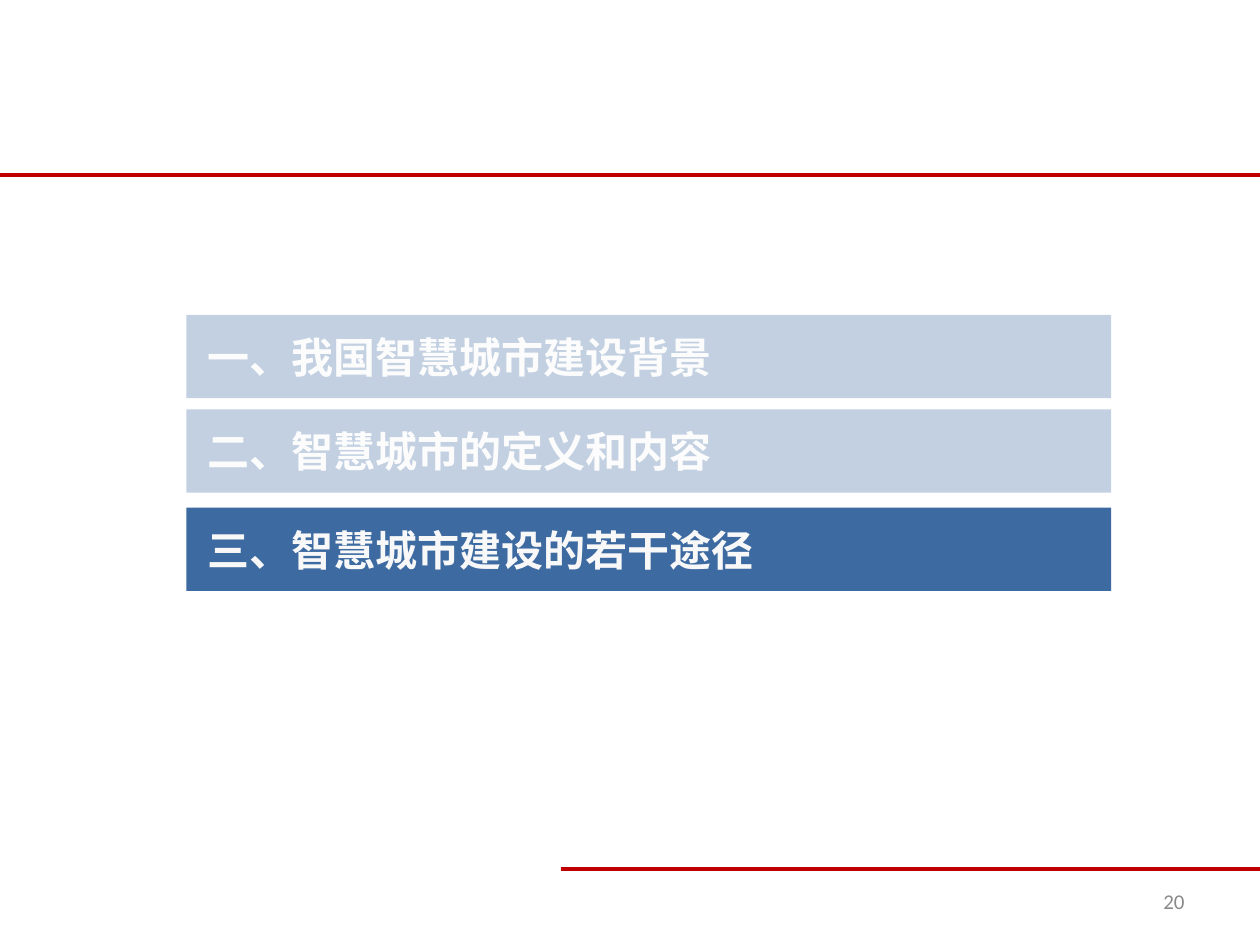
from dataclasses import dataclass

from lxml import etree
from pptx import Presentation
from pptx.dml.color import RGBColor
from pptx.enum.shapes import MSO_CONNECTOR, MSO_SHAPE
from pptx.enum.text import MSO_ANCHOR, PP_ALIGN
from pptx.oxml.ns import qn
from pptx.util import Inches, Pt

RECT = MSO_SHAPE.RECTANGLE
STRAIGHT = MSO_CONNECTOR.STRAIGHT
MIDDLE = MSO_ANCHOR.MIDDLE
LEFT, RIGHT = PP_ALIGN.LEFT, PP_ALIGN.RIGHT

RED, BLUE, WHITE = "C00000", "3D6AA1", "FFFFFF"
PALE, GREY = "F8F8F8", "898989"
CJK, LATIN = "Noto Sans CJK SC", "Calibri"
BAR_LEFT, BAR_WIDTH, BAR_HEIGHT = 1.48, 7.34, 0.66


@dataclass
class Section:
    top: float
    title: str


@dataclass
class Rule:
    left: float
    y: float


SECTIONS = [
    Section(2.5, "一、我国智慧城市建设背景"),
    Section(3.25, "二、智慧城市的定义和内容"),
    Section(4.03, "三、智慧城市建设的若干途径"),
]
RULES = [Rule(0, 1.39), Rule(4.45, 6.9)]


def rgb(value: str) -> RGBColor:
    return RGBColor.from_string(value)


def write(sp, text: str, *, size: float, color: str, font: str,
          bold: bool = False, align=LEFT, inset: float = 0.1,
          wrap: bool = True) -> None:
    tf = sp.text_frame
    tf.word_wrap = wrap
    tf.vertical_anchor = MIDDLE
    tf.margin_left = Inches(inset)
    p = tf.paragraphs[0]
    p.alignment = align
    r = p.add_run()
    r.text = text
    r.font.size = Pt(size)
    r.font.bold = bold
    r.font.name = font
    r.font.color.rgb = rgb(color)
    etree.SubElement(r.font._element, qn("a:ea"), typeface=font)


def add_rect(slide, left: float, top: float, width: float, height: float,
             fill: str, opacity: int = 100):
    """Add a borderless rectangle; opacity is a percentage."""
    sp = slide.shapes.add_shape(RECT, Inches(left), Inches(top),
                                Inches(width), Inches(height))
    sp.shadow.inherit = False
    sp.fill.solid()
    sp.fill.fore_color.rgb = rgb(fill)
    sp.line.fill.background()
    if opacity < 100:
        color = sp._element.spPr.find(qn("a:solidFill"))[0]
        etree.SubElement(color, qn("a:alpha"), val=str(opacity * 1000))
    return sp


def add_rule(slide, rule: Rule) -> None:
    """Add a red line that runs to the right edge of the slide."""
    line = slide.shapes.add_connector(STRAIGHT, Inches(rule.left), Inches(rule.y),
                                      Inches(10), Inches(rule.y))
    line.line.color.rgb = rgb(RED)
    line.line.width = Pt(2.25)
    etree.SubElement(line._element.spPr, qn("a:effectLst"))


def add_section(slide, section: Section) -> None:
    bar = add_rect(slide, BAR_LEFT, section.top, BAR_WIDTH, BAR_HEIGHT, BLUE)
    write(bar, section.title, size=24, color=PALE, font=CJK, bold=True,
          inset=0.17, wrap=False)


def main() -> None:
    prs = Presentation()
    prs.slide_width, prs.slide_height = Inches(10), Inches(7.5)
    slide = prs.slides.add_slide(prs.slide_layouts[6])

    for rule in RULES:
        add_rule(slide, rule)

    number = slide.shapes.add_textbox(Inches(7.17), Inches(6.95),
                                      Inches(2.33), Inches(0.4))
    write(number, "20", size=12, color=GREY, font=LATIN, align=RIGHT)

    for section in reversed(SECTIONS):
        add_section(slide, section)

    # The translucent veil dims the first two sections
    add_rect(slide, 1.02, 2.03, 8.52, 1.95, WHITE, opacity=69)

    prs.save("out.pptx")


if __name__ == "__main__":
    main()
